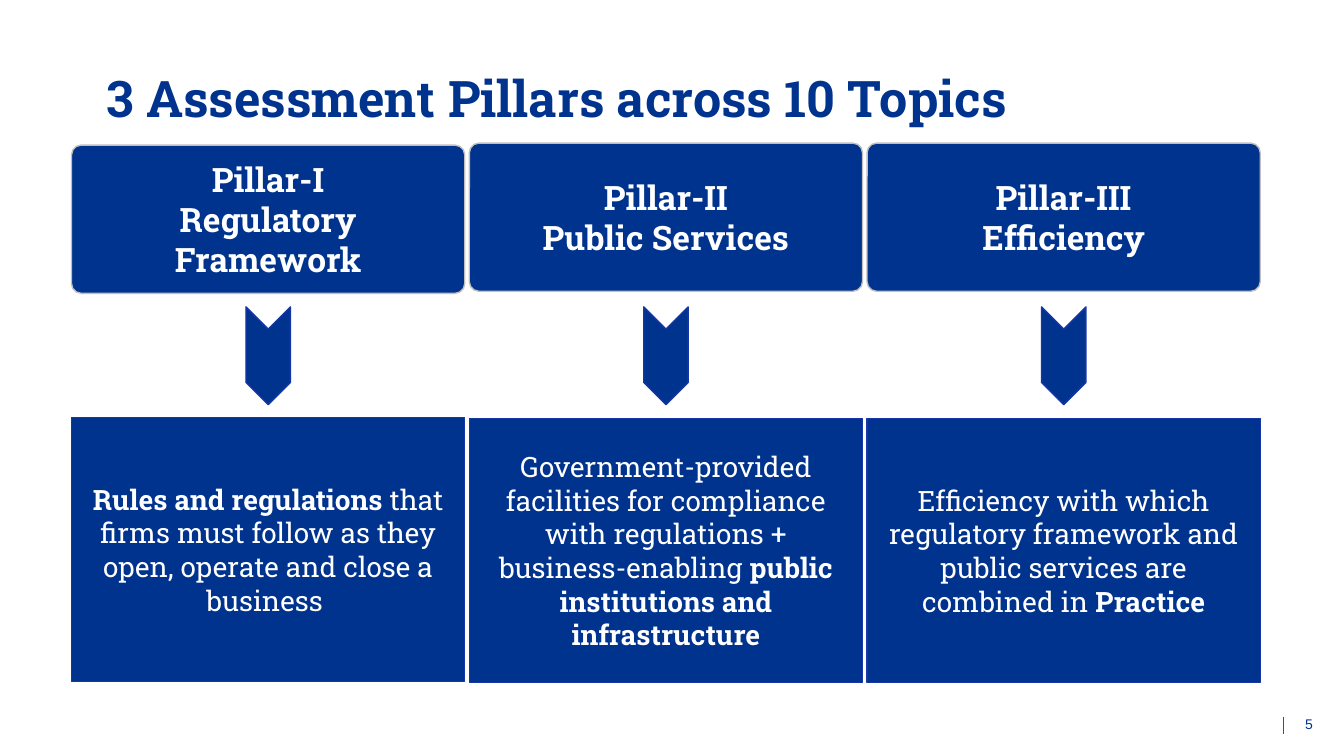
import pptx
import pptx.util
import pptx.dml.color
import pptx.enum.shapes
import pptx.enum.text
import pptx.oxml

Inches = pptx.util.Inches
SHAPES = pptx.enum.shapes.MSO_SHAPE
ALIGN = pptx.enum.text.PP_ALIGN
ANCHOR = pptx.enum.text.MSO_ANCHOR

# Content: each description is a list of (text, bold) runs
TITLE = "3 Assessment Pillars across 10 Topics"
PAGE_NUMBER = "5"
PILLARS = [
    {
        "heading": ["Pillar-I", "Regulatory Framework"],
        "description": [
            ("Rules and regulations ", True),
            ("that firms must follow as they open, operate and close a business ", False),
        ],
        "heading_top": 1.44,
        "description_top": 4.14,
    },
    {
        "heading": ["Pillar-II", "Public Services"],
        "description": [
            ("Government-provided facilities for compliance with regulations + "
             "business-enabling ", False),
            ("public institutions and infrastructure", True),
        ],
        "heading_top": 1.42,
        "description_top": 4.15,
    },
    {
        "heading": ["Pillar-III", "Efficiency"],
        "description": [
            ("Efficiency with which regulatory framework and public services are "
             "combined in ", False),
            ("Practice", True),
        ],
        "heading_top": 1.42,
        "description_top": 4.15,
    },
]

# Style and layout, lengths in inches
NAVY, WHITE, GREY = "00338D", "FFFFFF", "BFBFBF"
EDGE_BLUE, RULE_BLUE = "1636A7", "1E49E2"
SLAB = "Roboto Slab"
FIRST_LEFT, LAST_LEFT, CARD_WIDTH = 0.71, 8.6, 3.9
COLUMN_STEP = (LAST_LEFT - FIRST_LEFT) / (len(PILLARS) - 1)
HEADING_HEIGHT, DESCRIPTION_HEIGHT = 1.47, 2.62
CHEVRON_LENGTH, CHEVRON_WIDTH, CHEVRON_TOP = 0.97, 0.44, 3.31


def color(hex_string):
    return pptx.dml.color.RGBColor.from_string(hex_string)


def add_block(kind, left, top, width, height, line_color):
    shape = slide.shapes.add_shape(
        kind, Inches(left), Inches(top), Inches(width), Inches(height))
    shape.shadow.inherit = False
    shape.fill.solid()
    shape.fill.fore_color.rgb = color(NAVY)
    shape.line.color.rgb = color(line_color)
    shape.line.width = pptx.util.Pt(1)
    return shape


def add_text_box(left, top, width, height):
    return slide.shapes.add_textbox(
        Inches(left), Inches(top), Inches(width), Inches(height))


def write(shape, paragraphs, size, font_color, font=SLAB, align=ALIGN.CENTER,
          anchor=ANCHOR.MIDDLE):
    frame = shape.text_frame
    frame.word_wrap = True
    frame.vertical_anchor = anchor
    for index, runs in enumerate(paragraphs):
        paragraph = frame.add_paragraph() if index else frame.paragraphs[0]
        paragraph.alignment = align
        for text, bold in runs:
            run = paragraph.add_run()
            run.text = text
            run.font.name = font
            run.font.size = pptx.util.Pt(size)
            run.font.bold = bold
            run.font.color.rgb = color(font_color)


presentation = pptx.Presentation()
presentation.slide_width = Inches(13.33)
presentation.slide_height = Inches(7.5)
slide = presentation.slides.add_slide(presentation.slide_layouts[6])

# Page number and its rule
number_box = add_text_box(12.75, 7.11, 0.27, 0.16)
number_frame = number_box.text_frame
number_frame.margin_left = number_frame.margin_right = 0
number_frame.margin_top = number_frame.margin_bottom = 0
write(number_box, [[(PAGE_NUMBER, False)]], 10, NAVY, "Arial", ALIGN.RIGHT,
      ANCHOR.BOTTOM)
rule = slide.shapes.add_connector(
    pptx.enum.shapes.MSO_CONNECTOR.STRAIGHT,
    Inches(12.73), Inches(7.11), Inches(12.73), Inches(7.28))
rule.line.color.rgb = color(RULE_BLUE)
rule.line.width = pptx.util.Pt(0.5)
rule.element.spPr.append(pptx.oxml.parse_xml(
    '<a:effectLst xmlns:a="http://schemas.openxmlformats.org/drawingml/2006/main"/>'))

# Pillars: heading, chevron pointing down, description
for column, pillar in enumerate(PILLARS):
    left = FIRST_LEFT + column * COLUMN_STEP

    heading = add_block(SHAPES.ROUNDED_RECTANGLE, left, pillar["heading_top"],
                        CARD_WIDTH, HEADING_HEIGHT, GREY)
    heading.adjustments[0] = 0.065
    write(heading, [[(line, True)] for line in pillar["heading"]], 24, WHITE)

    chevron_left = left + (CARD_WIDTH - CHEVRON_LENGTH) / 2
    chevron = add_block(SHAPES.CHEVRON, chevron_left, CHEVRON_TOP,
                        CHEVRON_LENGTH, CHEVRON_WIDTH, EDGE_BLUE)
    chevron.rotation = 90

    description = add_block(SHAPES.RECTANGLE, left, pillar["description_top"],
                            CARD_WIDTH, DESCRIPTION_HEIGHT, EDGE_BLUE)
    write(description, [pillar["description"]], 20, WHITE)

# Title
title_box = add_text_box(0.96, 0.75, 11.15, 0.58)
write(title_box, [[(TITLE, True)]], 36, NAVY, align=ALIGN.LEFT)
title_box.text_frame.paragraphs[0].line_spacing = 0.7

presentation.save("out.pptx")
